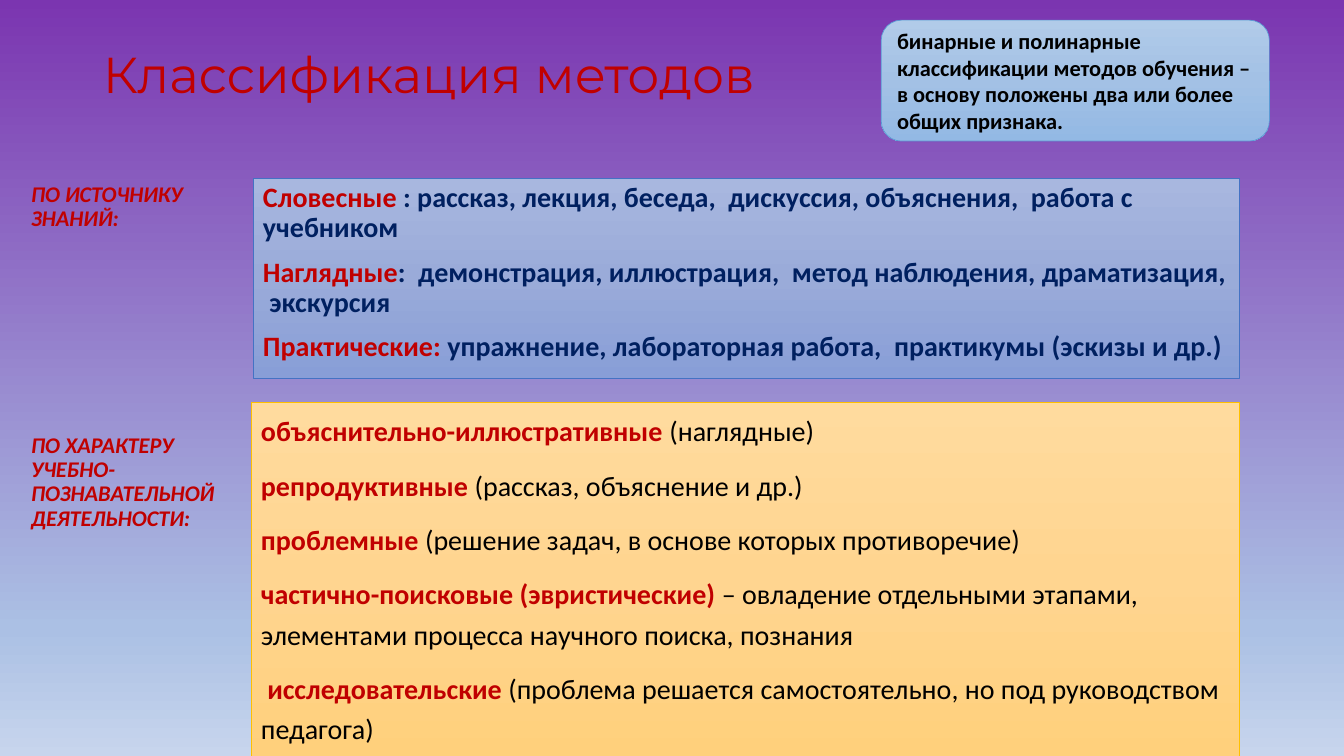
from lxml import etree
from pptx import Presentation
from pptx.dml.color import RGBColor
from pptx.enum.shapes import MSO_SHAPE
from pptx.enum.text import MSO_ANCHOR, MSO_AUTO_SIZE, PP_ALIGN
from pptx.oxml.ns import qn
from pptx.util import Inches, Pt

RECT, ROUND = MSO_SHAPE.RECTANGLE, MSO_SHAPE.ROUNDED_RECTANGLE
TOP, MIDDLE = MSO_ANCHOR.TOP, MSO_ANCHOR.MIDDLE
LEFT, FIXED = PP_ALIGN.LEFT, MSO_AUTO_SIZE.NONE

RED = RGBColor(0xC0, 0x00, 0x00)
NAVY = RGBColor(0x00, 0x20, 0x60)
BLACK = RGBColor(0x00, 0x00, 0x00)
BLUE_EDGE = RGBColor(0x44, 0x72, 0xC4)
SKY_EDGE = RGBColor(0x5B, 0x9B, 0xD5)
GOLD_EDGE = RGBColor(0xFF, 0xC0, 0x00)
# Gradients: percent along the way down, colour
BACK = [(0, RGBColor(0x7B, 0x35, 0xB0)), (83, RGBColor(0xAB, 0xC0, 0xE4)),
        (100, RGBColor(0xC7, 0xD5, 0xED))]
BLUE = [(0, RGBColor(0xA8, 0xB7, 0xDF)), (50, RGBColor(0x9A, 0xAB, 0xD9)),
        (100, RGBColor(0x88, 0x9E, 0xD7))]
SKY = [(0, RGBColor(0xB1, 0xCB, 0xE9)), (50, RGBColor(0xA3, 0xC1, 0xE5)),
       (100, RGBColor(0x93, 0xB9, 0xE4))]
GOLD = [(0, RGBColor(0xFF, 0xDB, 0x9E)), (50, RGBColor(0xFF, 0xD5, 0x90)),
        (100, RGBColor(0xFF, 0xD0, 0x7C))]

# Content: each paragraph is a tuple of a key part and a plain part
TITLE = "Классификация методов"
LABELS = ["ПО ИСТОЧНИКУ ЗНАНИЙ:",
          "ПО ХАРАКТЕРУ УЧЕБНО-ПОЗНАВАТЕЛЬНОЙ ДЕЯТЕЛЬНОСТИ:"]
NOTE = [("бинарные и полинарные классификации методов обучения –",),
        ("в основу положены два или более общих признака.",)]
SOURCES = [
    ("Словесные ", ": рассказ, лекция, беседа,  дискуссия, объяснения,  работа с учебником"),
    ("Наглядные", ":  демонстрация, иллюстрация,  метод наблюдения, драматизация,  экскурсия"),
    ("Практические: ", "упражнение, лабораторная работа,  практикумы (эскизы и др.)"),
]
KINDS = [
    ("объяснительно-иллюстративные ", "(наглядные)"),
    ("репродуктивные ", "(рассказ, объяснение и др.)"),
    ("проблемные ", "(решение задач, в основе которых противоречие)"),
    ("частично-поисковые (эвристические) ",
     "– овладение отдельными этапами, элементами процесса научного поиска, познания"),
    (" исследовательские", " (проблема решается самостоятельно, но под руководством педагога)"),
]

# Formats of the key part and the plain part
KEY = dict(size=Pt(20), bold=True, color=RED)
DARK = dict(KEY, color=NAVY)
PLAIN = dict(size=Pt(20), bold=False, color=BLACK)
SMALL = dict(size=Pt(16), bold=True, color=BLACK)
LABEL = dict(size=Pt(16), bold=True, italic=True, color=RED)
HEAD = dict(name="Montserrat", size=Pt(36), bold=False, color=RED)

# Grid, in inches
WIDE, HIGH = 13.33, 7.5
SIDE, MAIN, EDGE = 0.21, 2.51, 12.29
ROWS = [1.77, 4.26]
LOW = 3.99

PANELS = [
    (RECT, (MAIN, ROWS[0], EDGE - MAIN, 1.98), BLUE, BLUE_EDGE,
     SOURCES, (KEY, DARK), TOP, dict(line_spacing=0.9, space_before=Pt(10))),
    (ROUND, (8.74, 0.2, 3.85, 1.2), SKY, SKY_EDGE,
     NOTE, (SMALL,), MIDDLE, {}),
    (RECT, (MAIN - 0.02, LOW, EDGE - MAIN + 0.02, HIGH - LOW), GOLD, GOLD_EDGE,
     KINDS, (KEY, PLAIN), TOP, dict(line_spacing=1.2, space_before=Pt(10))),
]


def shade(fill, owner, stops):
    """Fill with a gradient that runs from top to bottom."""
    fill.gradient()
    grad = next(owner.iter(qn("a:gradFill")))
    grad.find(qn("a:lin")).set("ang", "5400000")
    track = grad.find(qn("a:gsLst"))
    for stop in list(track):
        track.remove(stop)
    for part, color in stops:
        stop = etree.SubElement(track, qn("a:gs"), pos=str(part * 1000))
        etree.SubElement(stop, qn("a:srgbClr"), val=str(color))


def write(shape, lines, looks, anchor=TOP, gaps=None):
    frame = shape.text_frame
    frame.word_wrap = True
    frame.auto_size = FIXED
    frame.vertical_anchor = anchor
    for i, line in enumerate(lines):
        para = frame.add_paragraph() if i else frame.paragraphs[0]
        para.alignment = LEFT
        for name, value in (gaps or {}).items():
            setattr(para, name, value)
        for text, look in zip(line, looks):
            run = para.add_run()
            run.text = text
            for name, value in {"name": "Calibri", **look}.items():
                if name == "color":
                    run.font.color.rgb = value
                else:
                    setattr(run.font, name, value)


deck = Presentation()
deck.slide_width, deck.slide_height = Inches(WIDE), Inches(HIGH)
slide = deck.slides.add_slide(deck.slide_layouts[5])
shade(slide.background.fill, slide.element, BACK)

# Title
title = slide.shapes.title
title.left, title.top, title.width, title.height = map(Inches, (0.92, 0.4, 11.5, 0.73))
write(title, [(TITLE,)], (HEAD,), MIDDLE, dict(line_spacing=0.9))

# Side labels
for top, text in zip(ROWS, LABELS):
    box = slide.shapes.add_textbox(*map(Inches, (SIDE, top, MAIN - SIDE, 1.2)))
    write(box, [(text,)], (LABEL,), TOP, dict(line_spacing=0.9))

# Panels
for form, place, stops, edge, lines, looks, anchor, gaps in PANELS:
    panel = slide.shapes.add_shape(form, *map(Inches, place))
    panel.shadow.inherit = False
    shade(panel.fill, panel.element, stops)
    panel.line.color.rgb = edge
    panel.line.width = Pt(0.5)
    write(panel, lines, looks, anchor, gaps)

deck.save("out.pptx")
